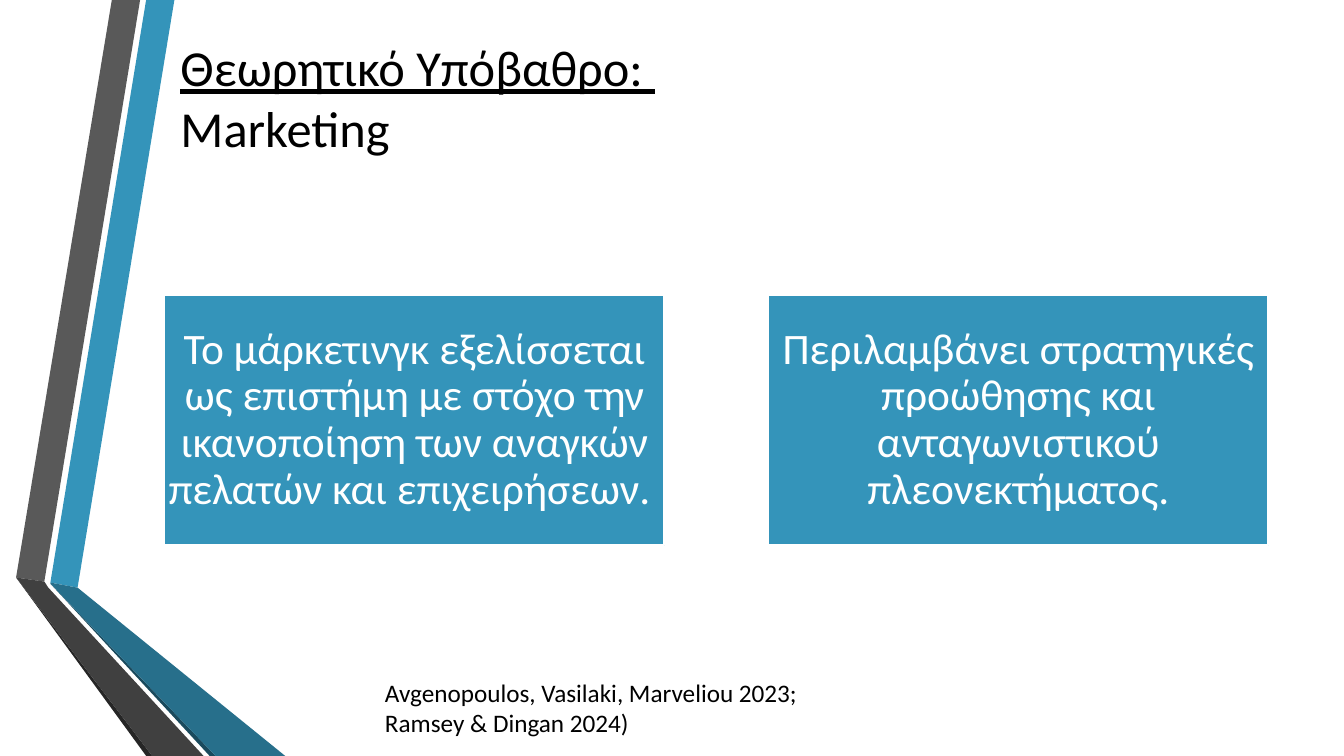
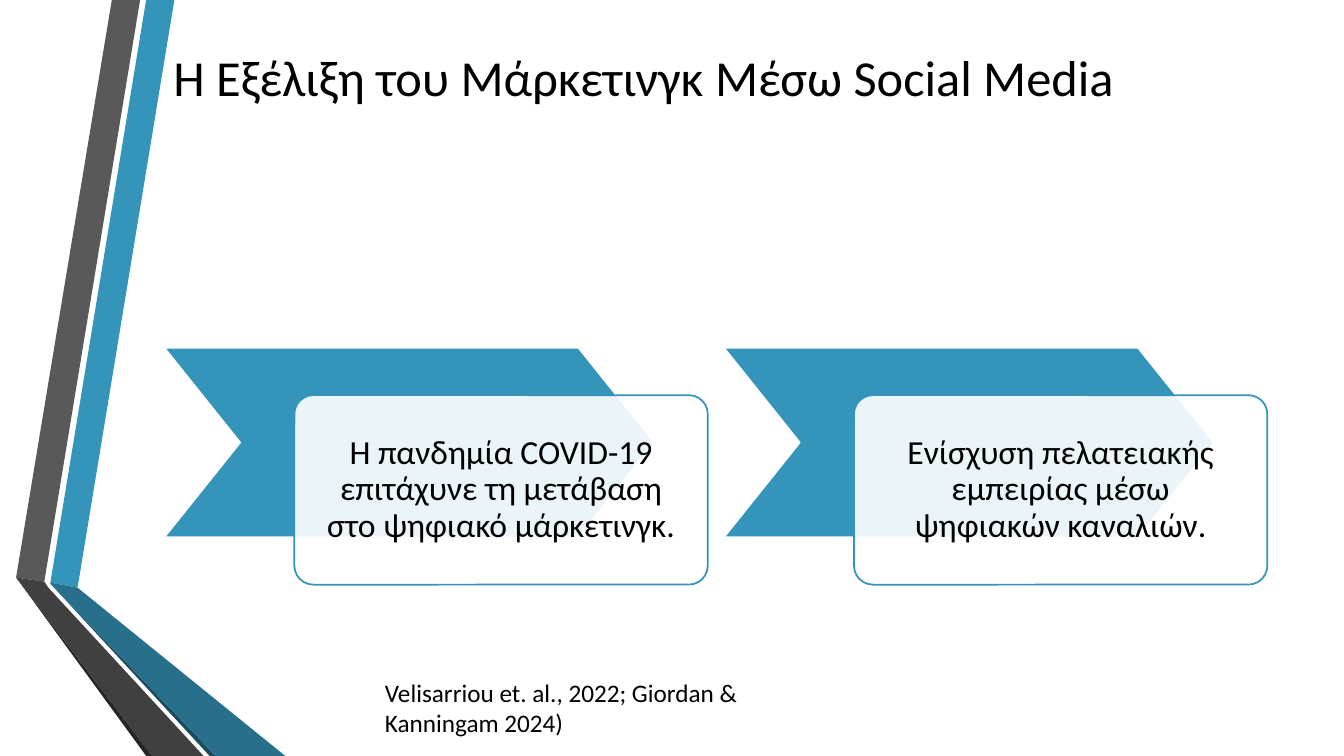
from dataclasses import dataclass

from lxml import etree
from pptx import Presentation
from pptx.dml.color import RGBColor
from pptx.enum import shapes, text
from pptx.oxml import ns
from pptx.util import Inches, Pt

FONT = "Calibri"
BLUE, WHITE, BLACK = "3494BA", "FFFFFF", "000000"
CONTENT_LEFT = 1.63
TITLE_ONLY = 5


@dataclass(frozen=True)
class Band:
    color: str
    points: tuple[tuple[float, float], ...]


@dataclass(frozen=True)
class Frame:
    left: float
    top: float
    width: float
    height: float

    def lengths(self) -> tuple:
        return tuple(Inches(n) for n in (self.left, self.top, self.width, self.height))


BANDS = (
    Band(BLUE, ((0.5, 5.78), (0.77, 5.83), (1.73, 0), (1.45, 0))),
    Band("595959", ((1.39, 0), (1.11, 0), (0.16, 5.73), (0.44, 5.77))),
    Band("262626", ((0.16, 5.73), (1.45, 7.5), (1.51, 7.5))),
    Band("1A4A5D", ((0.5, 5.79), (2.08, 7.5), (2.14, 7.5))),
    Band("276F8B", ((0.5, 5.79), (2.14, 7.5), (2.83, 7.5), (0.77, 5.83), (0.5, 5.78))),
    Band("404040", ((2.02, 7.5), (0.48, 5.83), (0.44, 5.77), (0.16, 5.73), (1.51, 7.5))),
)


def rgb(color: str) -> RGBColor:
    return RGBColor.from_string(color)


def paint(shape, fill: str, line: str | None = None) -> None:
    shape.shadow.inherit = False
    shape.fill.solid()
    shape.fill.fore_color.rgb = rgb(fill)
    if line:
        shape.line.color.rgb = rgb(line)
        shape.line.width = Pt(1.25)
    else:
        shape.line.fill.background()


def set_opacity(shape, percent: int) -> None:
    color = shape.element.spPr.find(ns.qn("a:solidFill")).find(ns.qn("a:srgbClr"))
    etree.SubElement(color, ns.qn("a:alpha"), val=str(percent * 1000))


def write(shape, words: str, size: float, color: str, align=text.PP_ALIGN.LEFT):
    frame = shape.text_frame
    frame.text = words
    frame.word_wrap = True
    para = frame.paragraphs[0]
    para.alignment = align
    for span in para.runs:
        span.font.name = FONT
        span.font.size = Pt(size)
        span.font.color.rgb = rgb(color)
    return para


def add_bands(page, layout) -> None:
    for index, band in enumerate(BANDS):
        corners = [(Inches(x), Inches(y)) for x, y in band.points]
        builder = page.shapes.build_freeform(*corners[0])
        builder.add_line_segments(corners[1:], close=True)
        shape = builder.convert_to_shape()
        paint(shape, band.color)
        layout.shapes.element.insert(2 + index, shape.element)


def add_title(page, words: str, left: float, top: float):
    title = page.shapes.title
    title.left, title.top, title.width, title.height = Frame(left, top, 10.96, 1.92).lengths()
    para = write(title, words, 36, BLACK)
    title.text_frame.auto_size = text.MSO_AUTO_SIZE.NONE
    title.text_frame.vertical_anchor = text.MSO_ANCHOR.MIDDLE
    return para


def add_citation(page, words: str) -> None:
    box = page.shapes.add_textbox(*Frame(3.72, 6.67, 4.77, 0.71).lengths())
    write(box, words, 18, BLACK)


def add_panel(page, kind, frame: Frame, fill: str, line: str):
    shape = page.shapes.add_shape(kind, *frame.lengths())
    paint(shape, fill, line)
    return shape


def write_panel(shape, words: str, size: float, color: str, inset: float) -> None:
    para = write(shape, words, size, color, text.PP_ALIGN.CENTER)
    para.line_spacing = 0.9
    frame = shape.text_frame
    frame.vertical_anchor = text.MSO_ANCHOR.MIDDLE
    frame.margin_left = frame.margin_right = Inches(inset)
    frame.margin_top = frame.margin_bottom = Inches(inset)


def add_statements(page, statements: tuple[str, ...]) -> None:
    for index, words in enumerate(statements):
        frame = Frame(CONTENT_LEFT + index * 5.99, 2.93, 4.96, 2.48)
        card = add_panel(page, shapes.MSO_SHAPE.RECTANGLE, frame, BLUE, WHITE)
        write_panel(card, words, 31, WHITE, 0.02)


def add_steps(page, steps: tuple[str, ...]) -> None:
    for index, words in enumerate(steps):
        left = CONTENT_LEFT + index * 5.55
        arrow = add_panel(page, shapes.MSO_SHAPE.CHEVRON, Frame(left, 3.45, 4.86, 1.88), BLUE, WHITE)
        arrow.adjustments[0] = 0.4
        frame = Frame(left + 1.29, 3.92, 4.1, 1.88)
        label = add_panel(page, shapes.MSO_SHAPE.ROUNDED_RECTANGLE, frame, WHITE, BLUE)
        label.adjustments[0] = 0.1
        set_opacity(label, 90)
        write_panel(label, words, 24, BLACK, 0.25)


def main() -> None:
    deck = Presentation()
    deck.slide_width, deck.slide_height = Inches(13.33), Inches(7.5)
    layout = deck.slide_layouts[TITLE_ONLY]

    page = deck.slides.add_slide(layout)
    add_bands(page, layout)
    heading = add_title(page, "Θεωρητικό Υπόβαθρο: \vMarketing", 1.69, 0)
    heading.runs[0].font.underline = True
    add_statements(page, (
        "Το μάρκετινγκ εξελίσσεται ως επιστήμη με στόχο την ικανοποίηση "
        "των αναγκών πελατών και επιχειρήσεων. ",
        "Περιλαμβάνει στρατηγικές προώθησης και ανταγωνιστικού πλεονεκτήματος.",
    ))
    add_citation(page, "Avgenopoulos, Vasilaki, Marveliou 2023; Ramsey & Dingan 2024)")

    page = deck.slides.add_slide(layout)
    add_title(page, "Η Εξέλιξη του Μάρκετινγκ Μέσω Social Media", 1.62, -0.2)
    add_steps(page, (
        "Η πανδημία COVID-19 επιτάχυνε τη μετάβαση στο ψηφιακό μάρκετινγκ.",
        "Ενίσχυση πελατειακής εμπειρίας μέσω ψηφιακών καναλιών.",
    ))
    add_citation(page, "Velisarriou et. al., 2022; Giordan & Kanningam 2024)")

    deck.save("out.pptx")


if __name__ == "__main__":
    main()
